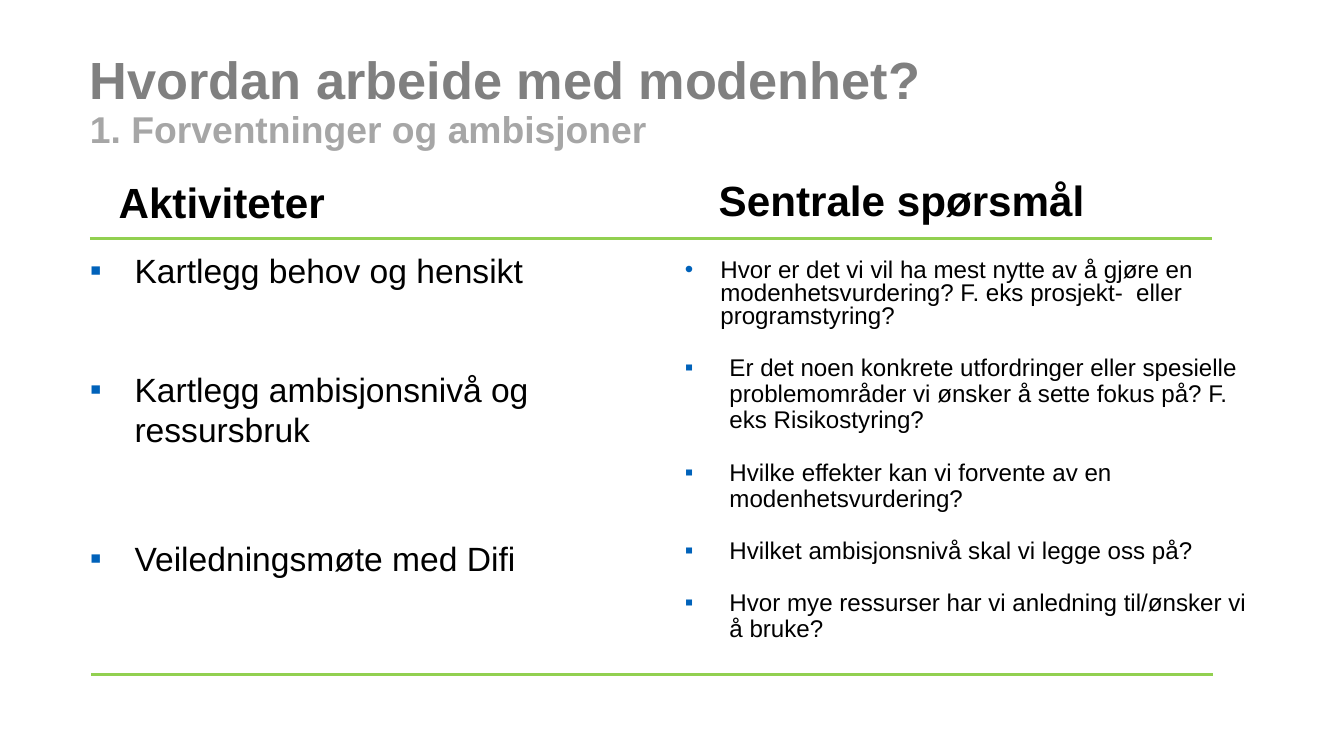
from dataclasses import dataclass

from lxml import etree
from pptx import Presentation
from pptx.dml.color import RGBColor
from pptx.enum.shapes import MSO_CONNECTOR
from pptx.enum.text import MSO_ANCHOR
from pptx.oxml.ns import qn
from pptx.util import Inches, Pt

COLORS = {
    "title": "808080",
    "subtitle": "A6A6A6",
    "text": "000000",
    "bullet": "0062BA",
    "rule": "92D050",
}
FONT = "Arial"


@dataclass
class Bullet:
    text: str
    space_before: float = 25
    line_spacing: float = 0.9
    indent: float = 0.59
    symbol: str = "▪"


@dataclass
class Column:
    heading: str
    heading_left: float
    heading_top: float
    heading_width: float
    left: float
    top: float
    height: float
    size: float
    bullets: list[Bullet]


COLUMNS = [
    Column("Aktiviteter", 1.47, 2.28, 2.96, 1.19, 3.3, 5.28, 32, [
        Bullet("Kartlegg behov og hensikt", 0, 1),
        Bullet("Kartlegg ambisjonsnivå og ressursbruk", 75, 1),
        Bullet("Veiledningsmøte med Difi", 84, 1),
    ]),
    Column("Sentrale spørsmål", 9.41, 2.26, 5.09, 9.06, 3.44, 5.14, 23, [
        Bullet("Hvor er det vi vil ha mest nytte av å gjøre en modenhetsvurdering? "
               "F. eks prosjekt-  eller programstyring?", 0, 0.8, 0.47, "•"),
        Bullet("Er det noen konkrete utfordringer eller spesielle problemområder "
               "vi ønsker å sette fokus på? F. eks Risikostyring?"),
        Bullet("Hvilke effekter kan vi forvente av en modenhetsvurdering?"),
        Bullet("Hvilket ambisjonsnivå skal vi legge oss på?"),
        Bullet("Hvor mye ressurser har vi anledning til/ønsker vi å bruke?"),
    ]),
]


def add_text_frame(slide, left: float, top: float, width: float, height: float):
    """Add a wrapping text box without margins and return its frame."""
    box = slide.shapes.add_textbox(
        Inches(left), Inches(top), Inches(width), Inches(height))
    frame = box.text_frame
    frame.word_wrap = True
    frame.margin_left = frame.margin_right = 0
    frame.margin_top = frame.margin_bottom = 0
    return frame


def style_run(run, size: float, color: str, bold: bool = False) -> None:
    run.font.name = FONT
    run.font.size = Pt(size)
    run.font.bold = bold
    run.font.color.rgb = RGBColor.from_string(COLORS[color])


def add_title(slide) -> None:
    frame = add_text_frame(slide, 1.19, 0.71, 15.4, 1.29)
    frame.vertical_anchor = MSO_ANCHOR.BOTTOM
    frame.text = "Hvordan arbeide med modenhet?\v1. Forventninger og ambisjoner"
    paragraph = frame.paragraphs[0]
    paragraph.line_spacing = 0.9
    title, subtitle = paragraph.runs
    style_run(title, 49.8, "title", True)
    style_run(subtitle, 35.5, "subtitle", True)


def add_heading(slide, column: Column) -> None:
    box = slide.shapes.add_textbox(
        Inches(column.heading_left), Inches(column.heading_top),
        Inches(column.heading_width), Inches(0.78))
    box.text_frame.word_wrap = False
    box.text_frame.text = column.heading
    style_run(box.text_frame.paragraphs[0].runs[0], 40.2, "text", True)


def set_bullet(paragraph, bullet: Bullet) -> None:
    properties = paragraph._p.get_or_add_pPr()
    properties.set("marL", str(Inches(bullet.indent)))
    properties.set("indent", str(-Inches(bullet.indent)))
    color = etree.SubElement(properties, qn("a:buClr"))
    etree.SubElement(color, qn("a:srgbClr"), val=COLORS["bullet"])
    etree.SubElement(properties, qn("a:buFont"), typeface=FONT)
    etree.SubElement(properties, qn("a:buChar"), char=bullet.symbol)


def add_bullets(slide, column: Column) -> None:
    frame = add_text_frame(slide, column.left, column.top, 7.53, column.height)
    frame.text = "\n".join(bullet.text for bullet in column.bullets)
    for paragraph, bullet in zip(frame.paragraphs, column.bullets):
        set_bullet(paragraph, bullet)
        paragraph.line_spacing = bullet.line_spacing
        if bullet.space_before:
            paragraph.space_before = Pt(bullet.space_before)
        style_run(paragraph.runs[0], column.size, "text")


def add_rule(slide, left: float, top: float) -> None:
    line = slide.shapes.add_connector(
        MSO_CONNECTOR.STRAIGHT, Inches(left), Inches(top),
        Inches(left + 14.84), Inches(top))
    line.line.color.rgb = RGBColor.from_string(COLORS["rule"])
    line.line.width = Pt(3)
    etree.SubElement(line._element.spPr, qn("a:effectLst"))


def main() -> None:
    presentation = Presentation()
    presentation.slide_width = Inches(17.78)
    presentation.slide_height = Inches(10)
    slide = presentation.slides.add_slide(presentation.slide_layouts[6])
    add_title(slide)
    for column in COLUMNS:
        add_heading(slide, column)
        add_bullets(slide, column)
    add_rule(slide, 1.19, 3.16)
    add_rule(slide, 1.21, 8.92)
    presentation.save("out.pptx")


if __name__ == "__main__":
    main()
